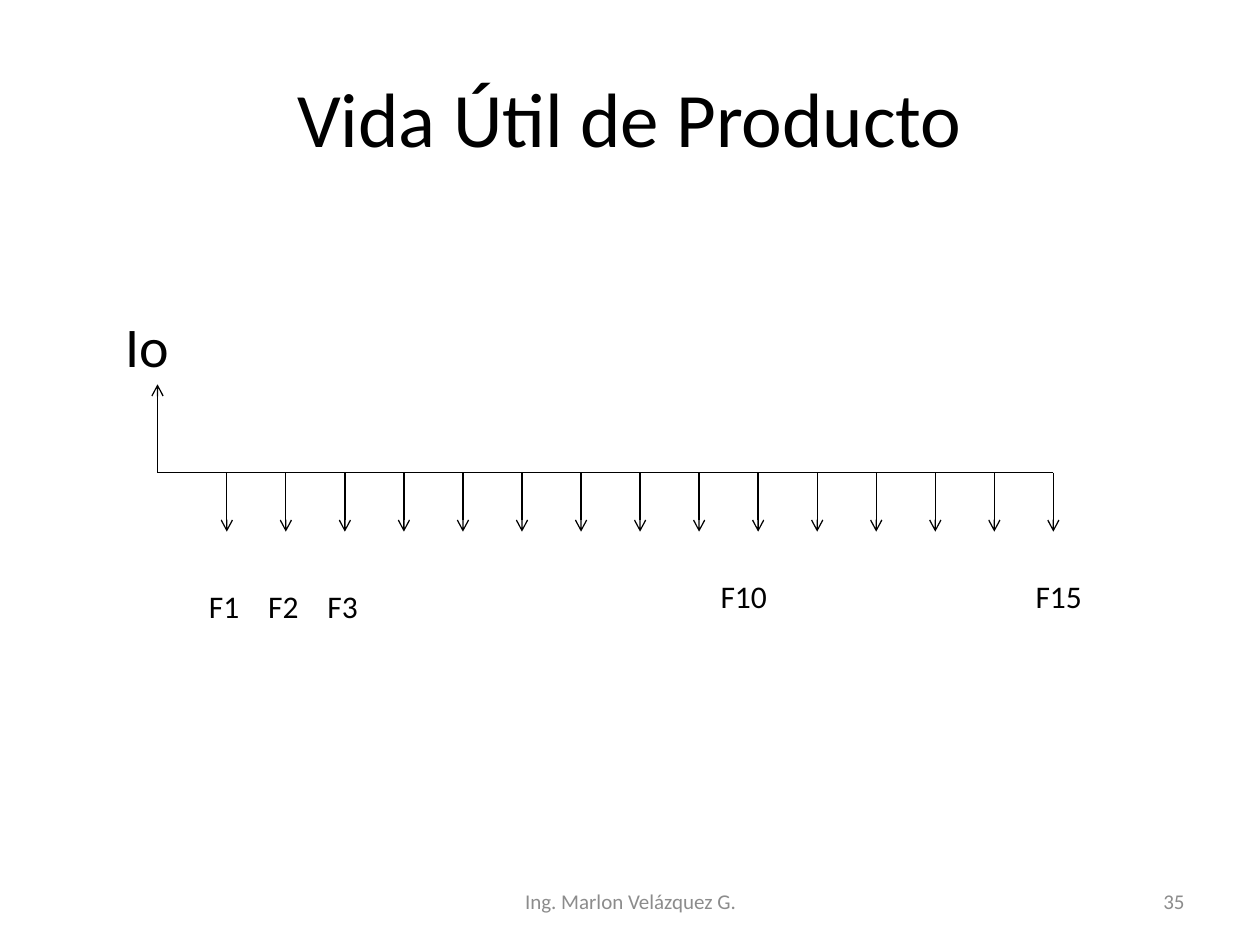
"""Build the product life cash-flow timeline slide."""
import pptx
import pptx.util
import pptx.dml.color
import pptx.enum.shapes
import pptx.enum.text
import pptx.oxml
import pptx.oxml.ns

Inches = pptx.util.Inches
ALIGN = pptx.enum.text.PP_ALIGN
ANCHOR = pptx.enum.text.MSO_ANCHOR

COLOURS = {"ink": "000000", "footer": "8C8C8C", "background": "FFFFFF"}
FONT = "Calibri"
TITLE = "Vida Útil de Producto"
LABELS = [
    ("Io", 0.9, 2.42, 0.8, 0.64, 32),
    ("F1", 1.56, 4.61, 0.55, 0.4, 18),
    ("F2", 2.03, 4.61, 0.55, 0.4, 18),
    ("F3", 2.5, 4.61, 0.55, 0.4, 18),
    ("F10", 5.62, 4.53, 0.78, 0.4, 18),
    ("F15", 8.12, 4.53, 0.78, 0.4, 18),
]
FOOTERS = [
    ("Ing. Marlon Velázquez G.", 3.42, 3.17, ALIGN.CENTER),
    ("35", 7.17, 2.33, ALIGN.RIGHT),
]
PERIODS = 15
AXIS_START, AXIS_END, AXIS_Y = 1.25, 8.36, 3.75
FIRST_FLOW, FLOW_TIP, INVESTMENT_TIP = 1.8, 4.22, 3.05


def write(shape, text, size, colour="ink", align=ALIGN.LEFT, anchor=ANCHOR.TOP):
    frame = shape.text_frame
    frame.word_wrap = True
    frame.vertical_anchor = anchor
    paragraph = frame.paragraphs[0]
    paragraph.text = text
    paragraph.alignment = align
    paragraph.font.name = FONT
    paragraph.font.size = pptx.util.Pt(size)
    paragraph.font.color.rgb = pptx.dml.color.RGBColor.from_string(COLOURS[colour])


def add_text(slide, box, *args, **options):
    shape = slide.shapes.add_textbox(*map(Inches, box))
    write(shape, *args, **options)


def add_line(slide, start, end, arrow=True):
    connector = slide.shapes.add_connector(
        pptx.enum.shapes.MSO_CONNECTOR.STRAIGHT, *map(Inches, start + end))
    connector.line.width = pptx.util.Pt(0.75)
    connector.line.color.rgb = pptx.dml.color.RGBColor.from_string(COLOURS["ink"])
    properties = connector._element.spPr
    if arrow:
        tail = pptx.oxml.parse_xml(
            f'<a:tailEnd {pptx.oxml.ns.nsdecls("a")} type="arrow"/>')
        properties.find(pptx.oxml.ns.qn("a:ln")).append(tail)
    properties.append(
        pptx.oxml.parse_xml(f'<a:effectLst {pptx.oxml.ns.nsdecls("a")}/>'))


def main():
    presentation = pptx.Presentation()
    presentation.slide_width = Inches(10)
    presentation.slide_height = Inches(7.5)
    slide = presentation.slides.add_slide(presentation.slide_layouts[5])
    slide.background.fill.solid()
    slide.background.fill.fore_color.rgb = pptx.dml.color.RGBColor.from_string(
        COLOURS["background"])

    title = slide.shapes.title
    title.left, title.top, title.width, title.height = map(
        Inches, (0.5, 0.3, 9, 1.25))
    write(title, TITLE, 44, align=ALIGN.CENTER, anchor=ANCHOR.MIDDLE)

    add_line(slide, (AXIS_START, AXIS_Y), (AXIS_END, AXIS_Y), arrow=False)
    add_line(slide, (AXIS_START, AXIS_Y), (AXIS_START, INVESTMENT_TIP))
    step = (AXIS_END - FIRST_FLOW) / (PERIODS - 1)
    for period in range(PERIODS):
        x = FIRST_FLOW + period * step
        add_line(slide, (x, AXIS_Y), (x, FLOW_TIP))

    for text, left, top, width, height, size in LABELS:
        add_text(slide, (left, top, width, height), text, size)
    for text, left, width, align in FOOTERS:
        add_text(slide, (left, 6.95, width, 0.4), text, 12, "footer",
                 align=align, anchor=ANCHOR.MIDDLE)

    presentation.save("out.pptx")


if __name__ == "__main__":
    main()
